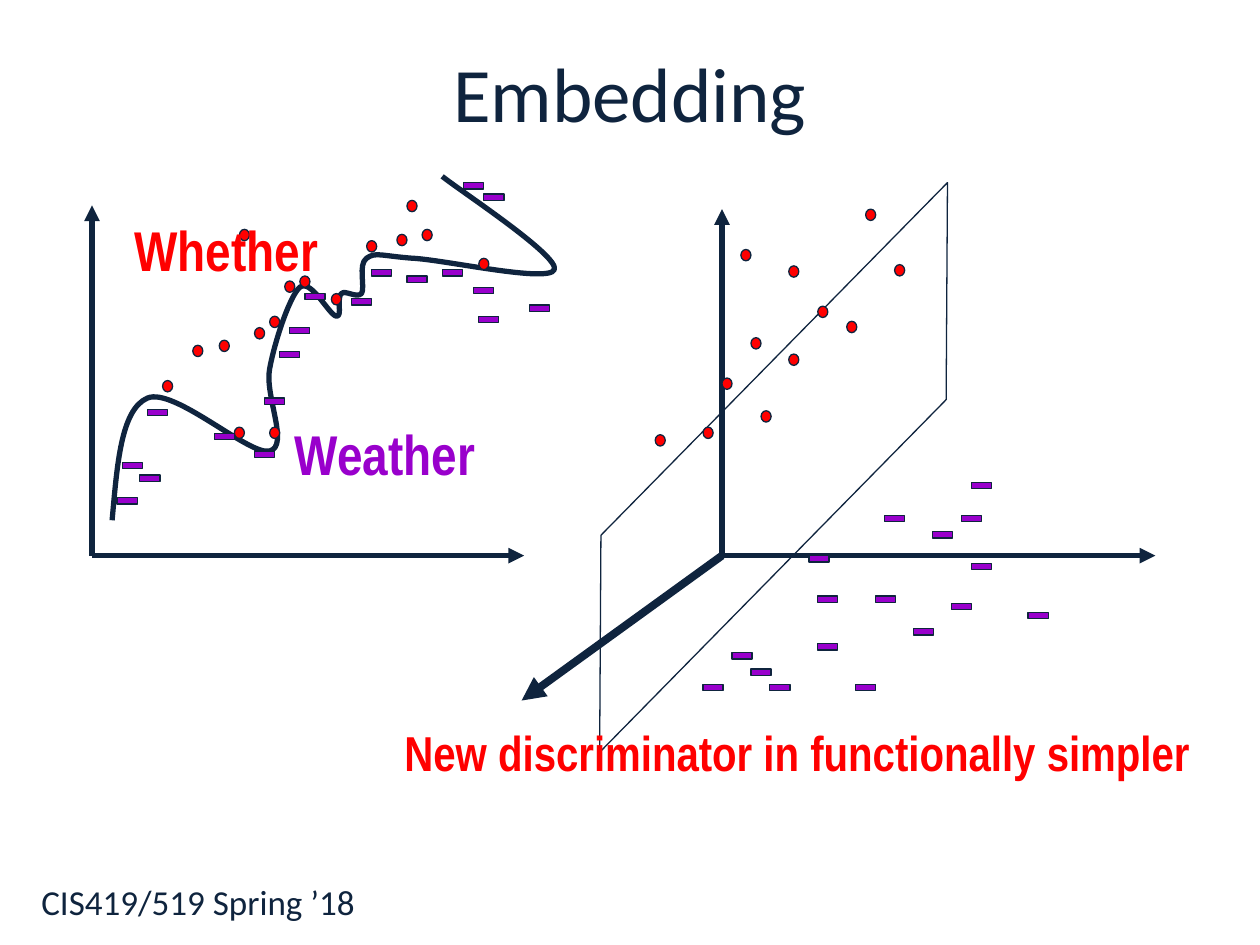
from pptx import Presentation
from pptx.dml.color import RGBColor as Rgb
from pptx.enum.shapes import MSO_CONNECTOR as Link, MSO_SHAPE as Kind
from pptx.enum.text import MSO_ANCHOR as Anchor, MSO_AUTO_SIZE as Fit, PP_ALIGN as Align
from pptx.oxml.ns import qn
from pptx.util import Cm, Pt
from lxml.etree import SubElement as Sub

THEME = {
    "ink": Rgb(0x0F, 0x24, 0x3E), "red": Rgb(0xFF, 0, 0),
    "purple": Rgb(0x99, 0, 0xCC), "white": Rgb(0xFF, 0xFF, 0xFF),
    "body": "Calibri", "label": "Arial Narrow",
    "title": 44, "word": 32, "claim": 28, "foot": 20,
    "thin": 0.75, "thick": 3, "heavy": 4.5,
}

FOOT = [("CIS419/519 Spring ’18", (0.23, 6.94, 9.6, 0.56), "foot", "body", "ink", Align.LEFT, Anchor.TOP)]
WORDS = [
    ("Weather", (2.24, 3.28, 1.64, 0.63), "word", "label", "purple", Align.LEFT, Anchor.TOP),
    ("Whether", (0.97, 1.66, 1.66, 0.63), "word", "label", "red", Align.LEFT, Anchor.TOP),
]
HEADS = [
    ("New discriminator in functionally simpler", (3.11, 5.68, 6.43, 0.57), "claim", "label", "red",
     Align.CENTER, Anchor.MIDDLE),
    ("Embedding", (0.5, 0.31, 9, 1.25), "title", "body", "ink", Align.CENTER, Anchor.TOP),
]

FLAT, SPACE = (0.73, 4.41), (5.73, 4.41)
BACK = [
    (SPACE, (5.73, 1.66), "thick"), (FLAT, (0.73, 1.63), "thick"), (FLAT, (4.16, 4.41), "thick"),
]
FRONT = [(SPACE, (9.17, 4.41), "thick"), (SPACE, (4.14, 5.56), "heavy")]

PLANE = {"box": (3.56, 3.11, 5.16, 1.2), "skew": 1.03, "turn": 314.5}

START, SPAN = (0.89, 4.13), 3.56
CURVE = [
    ((0.93, 3.69), (0.96, 3.25), (1.17, 3.16)),
    ((1.38, 3.07), (1.98, 3.62), (2.14, 3.58)),
    ((2.3, 3.54), (2.1, 3.14), (2.14, 2.93)),
    ((2.18, 2.71), (2.3, 2.35), (2.38, 2.28)),
    ((2.47, 2.21), (2.61, 2.5), (2.67, 2.51)),
    ((2.72, 2.52), (2.67, 2.36), (2.71, 2.33)),
    ((2.74, 2.3), (2.83, 2.37), (2.87, 2.33)),
    ((2.9, 2.28), (2.84, 2.1), (2.91, 2.05)),
    ((2.98, 2.0), (3.02, 2.03), (3.27, 2.05)),
    ((3.52, 2.06), (4.36, 2.25), (4.4, 2.14)),
    ((4.44, 2.03), (3.66, 1.52), (3.51, 1.4)),
]

LEFT = {
    "dots": [
        (1.86, 3.39), (2.14, 2.51), (1.9, 1.82), (2.02, 2.6), (2.26, 2.23), (2.14, 3.39), (2.63, 2.33),
        (2.38, 2.19), (1.74, 2.7), (1.53, 2.74), (1.29, 3.02), (3.23, 1.59), (3.8, 2.05), (3.15, 1.86),
        (2.91, 1.91), (3.35, 1.82),
    ],
    "bars": [
        (2.3, 2.6), (0.97, 3.67), (3.51, 2.14), (2.1, 3.16), (2.95, 2.14), (2.42, 2.33), (1.7, 3.44),
        (3.23, 2.19), (3.84, 1.54), (2.79, 2.37), (3.68, 1.45), (2.22, 2.79), (1.17, 3.25), (3.8, 2.51),
        (3.76, 2.28), (2.02, 3.58), (4.2, 2.42), (0.93, 3.95),
    ],
}
RIGHT = {
    "dots": [
        (5.88, 1.98), (6.87, 1.66), (6.26, 2.11), (7.1, 2.1), (6.49, 2.43), (5.96, 2.68), (6.72, 2.55),
        (5.2, 3.45), (6.26, 2.81), (5.73, 3.0), (5.58, 3.39), (6.04, 3.26),
    ],
    "bars": [
        (1.11, 3.77), (7.4, 4.22), (7.63, 4.09), (7.71, 4.47), (6.42, 4.41), (7.02, 4.09), (8.16, 4.86),
        (6.95, 4.73), (7.71, 3.83), (7.25, 4.99), (6.49, 5.11), (7.55, 4.79), (6.49, 4.73), (6.79, 5.43),
        (5.58, 5.43), (5.81, 5.18), (5.96, 5.31), (6.11, 5.43),
    ],
}
MARKS = {
    "dots": (Kind.OVAL, (0.08, 0.09), "red"),
    "bars": (Kind.RECTANGLE, (0.16, 0.05), "purple"),
}


def grid(*nums):
    return [Cm(num * 2.54) for num in nums]


def stroke(item, width):
    item.line.color.rgb = THEME["ink"]
    item.line.width = Pt(THEME[width])


def add_shape(shapes, kind, box, fill):
    shape = shapes.add_shape(kind, *grid(*box))
    shape.shadow.inherit = False
    shape.fill.solid()
    shape.fill.fore_color.rgb = THEME[fill]
    stroke(shape, "thin")
    return shape


def add_marks(shapes, panel):
    for name, spots in panel.items():
        kind, size, fill = MARKS[name]
        for spot in spots:
            add_shape(shapes, kind, spot + size, fill)


def add_axes(shapes, axes):
    for start, end, width in axes:
        axis = shapes.add_connector(Link.STRAIGHT, *grid(*start, *end))
        stroke(axis, width)
        Sub(axis.line._get_or_add_ln(), qn("a:tailEnd"), type="triangle")
        Sub(axis._element.spPr, qn("a:effectLst"))


def add_curve(shapes):
    pen = shapes.build_freeform(*grid(*START))
    pen.add_line_segments([grid(*knots[-1]) for knots in CURVE], close=False)
    curve = pen.convert_to_shape()
    left, top = curve.left, curve.top
    for leg, knots in zip(list(curve._element.iter(qn("a:lnTo"))), CURVE):
        leg.clear()
        bend = Sub(leg.getparent(), qn("a:cubicBezTo"))
        leg.getparent().replace(leg, bend)
        for x, y in (grid(*knot) for knot in knots):
            Sub(bend, qn("a:pt"), x=str(x - left), y=str(y - top))
    curve.width = grid(SPAN)[0]
    for route in curve._element.iter(qn("a:path")):
        route.set("w", str(curve.width))
    curve.shadow.inherit = False
    curve.fill.background()
    stroke(curve, "thick")


def add_texts(shapes, texts):
    for words, box, size, face, color, align, anchor in texts:
        label = face == "label"
        frame = shapes.add_textbox(*grid(*box)).text_frame
        frame.word_wrap = not label
        frame.auto_size = Fit.SHAPE_TO_FIT_TEXT if label else Fit.NONE
        frame.vertical_anchor = anchor
        para = frame.paragraphs[0]
        para.alignment = align
        run = para.add_run()
        run.text = words
        run.font.name = THEME[face]
        run.font.size = Pt(THEME[size])
        run.font.bold = label
        run.font.color.rgb = THEME[color]


def main():
    """Build the embedding slide and save it."""
    deck = Presentation()
    deck.slide_width, deck.slide_height = grid(10, 7.5)
    shapes = deck.slides.add_slide(deck.slide_layouts[6]).shapes

    add_texts(shapes, FOOT)
    plane = add_shape(shapes, Kind.PARALLELOGRAM, PLANE["box"], "white")
    plane.adjustments[0] = PLANE["skew"]
    plane.rotation = PLANE["turn"]
    add_axes(shapes, BACK)
    add_curve(shapes)
    add_marks(shapes, LEFT)
    add_texts(shapes, WORDS)
    add_axes(shapes, FRONT)
    add_marks(shapes, RIGHT)
    add_texts(shapes, HEADS)
    deck.save("out.pptx")


if __name__ == "__main__":
    main()
